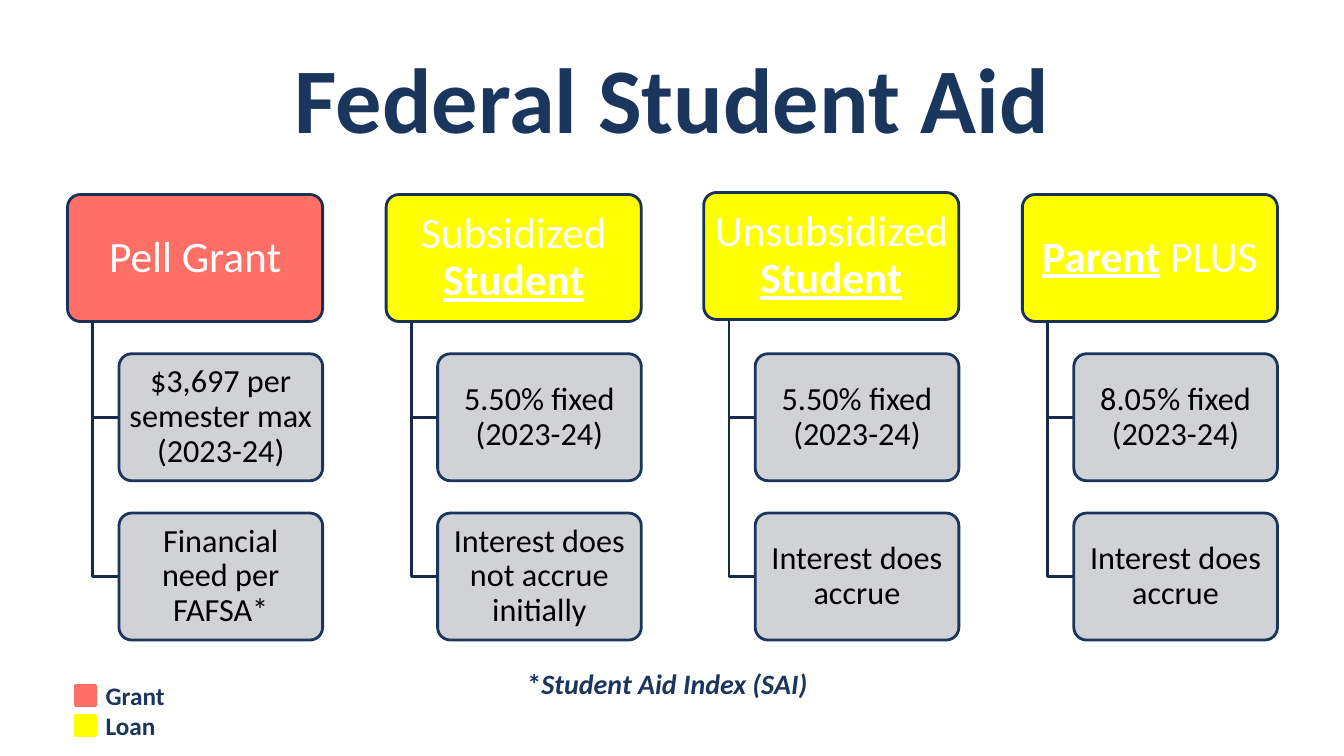
from dataclasses import dataclass

from lxml.etree import SubElement
from pptx import Presentation
from pptx.dml.color import RGBColor
from pptx.enum.shapes import MSO_SHAPE
from pptx.enum.text import MSO_ANCHOR, MSO_AUTO_SIZE, PP_ALIGN
from pptx.oxml.ns import qn
from pptx.util import Pt

PX = 9144  # EMU; 100 px to the inch


@dataclass(frozen=True)
class Theme:
    font: str = "Calibri"
    navy: str = "1B365D"
    head_line: str = "193154"
    branch: str = "162B4A"
    grant: str = "FF6F66"
    loan: str = "FFFF00"
    detail: str = "CDCED2"
    white: str = "FFFFFF"
    black: str = "000000"
    title_size: int = 66
    head_size: int = 31
    detail_size: int = 23
    legend_size: int = 18
    note_size: int = 20
    line: int = 2


THEME = Theme()

# Fill, rise of the head above the row, head spans, details
PROGRAMS = [
    (THEME.grant, 0, [("Pell Grant", "")],
     ["$3,697 per semester max (2023-24)", "Financial need per FAFSA*"]),
    (THEME.loan, 0, [("Subsidized ", ""), ("Student", "bu")],
     ["5.50% fixed (2023-24)", "Interest does not accrue initially"]),
    (THEME.loan, 2, [("Unsubsidized ", ""), ("Student", "bu")],
     ["5.50% fixed (2023-24)", "Interest does accrue"]),
    (THEME.loan, 0, [("Parent", "bu"), (" PLUS", "")],
     ["8.05% fixed (2023-24)", "Interest does accrue"]),
]
LEGEND = [("Grant", THEME.grant), ("Loan", THEME.loan)]


def emu(*lengths):
    return [length * PX for length in lengths]


def write(frame, spans, size, color, align=PP_ALIGN.CENTER):
    """Fill the frame's paragraph with (text, style) spans; style letters are b, i and u."""
    frame.word_wrap = True
    para = frame.paragraphs[0]
    para.alignment = align
    for text, style in spans:
        span = para.add_run()
        span.text = text
        font = span.font
        font.name, font.size = THEME.font, Pt(size)
        font.color.rgb = RGBColor.from_string(color)
        font.bold, font.italic, font.underline = (mark in style for mark in "biu")


def add_box(page, kind, box, fill, line):
    shape = page.shapes.add_shape(kind, *emu(*box))
    shape.shadow.inherit = False
    shape.fill.solid()
    shape.fill.fore_color.rgb = RGBColor.from_string(fill)
    shape.line.color.rgb = RGBColor.from_string(line)
    shape.line.width = Pt(THEME.line)
    return shape


def add_card(page, box, fill, line, spans, size, color, insets):
    card = add_box(page, MSO_SHAPE.ROUNDED_RECTANGLE, box, fill, line)
    card.adjustments[0] = 0.1
    frame = card.text_frame
    frame.margin_left = frame.margin_right = insets[0] * PX
    frame.margin_top = frame.margin_bottom = insets[1] * PX
    frame.vertical_anchor = MSO_ANCHOR.MIDDLE
    write(frame, spans, size, color)
    frame.paragraphs[0].line_spacing = 0.9
    return card


def add_branch(page, x, top, bottom, right):
    builder = page.shapes.build_freeform(x, top, scale=PX)
    builder.add_line_segments([(x, bottom), (right, bottom)], close=False)
    branch = builder.convert_to_shape()
    branch.shadow.inherit = False
    branch.fill.background()
    branch.line.color.rgb = RGBColor.from_string(THEME.branch)
    branch.line.width = Pt(THEME.line)


def add_label(page, box, spans, size, align):
    label = page.shapes.add_textbox(*emu(*box))
    write(label.text_frame, spans, size, THEME.navy, align)


def add_title(page, box, text):
    title = page.shapes.title
    title.left, title.top, title.width, title.height = emu(*box)
    frame = title.text_frame
    frame.auto_size = MSO_AUTO_SIZE.NONE
    frame.vertical_anchor = MSO_ANCHOR.MIDDLE
    write(frame, [(text, "b")], THEME.title_size, THEME.navy)


def add_program(page, box, program):
    """Place a head card with its details hanging below it."""
    left, top, width, height = box
    fill, rise, spans, details = program
    card_height, row_pitch, indent = 126, 158, 51
    add_card(page, (left, top - rise, width, card_height), fill, THEME.head_line,
             spans, THEME.head_size, THEME.white, (6, 4))
    for row, text in enumerate(details, 1):
        detail_top = top + row * row_pitch
        add_branch(page, left + 25, top - rise + card_height,
                   detail_top + card_height // 2, left + indent)
        card = add_card(page, (left + indent, detail_top, width - indent, card_height),
                        THEME.detail, THEME.navy, [(text, "")],
                        THEME.detail_size, THEME.black, (5, 3))
        color = card.fill._xPr.find(qn("a:solidFill"))[0]
        SubElement(color, qn("a:alpha"), val="90000")


def add_programs(page, box):
    left, top, width, height = box
    card_width = 253
    pitch = (width - card_width) / (len(PROGRAMS) - 1)
    for column, program in enumerate(PROGRAMS):
        add_program(page, (left + round(column * pitch), top, card_width, height), program)


def add_legend(page, box):
    left, top, width, height = box
    swatch, pitch = 20, 30
    for row, (name, fill) in enumerate(LEGEND):
        row_top = top + row * pitch
        add_box(page, MSO_SHAPE.RECTANGLE, (left, row_top + 10, swatch, swatch), fill, fill)
        add_label(page, (left + swatch, row_top, width - swatch, height - pitch),
                  [(name, "b")], THEME.legend_size, PP_ALIGN.LEFT)


def main():
    deck = Presentation()
    deck.slide_width, deck.slide_height = emu(1333, 750)
    page = deck.slides.add_slide(deck.slide_layouts[5])
    add_title(page, (67, 33, 1200, 125), "Federal Student Aid")
    add_programs(page, (67, 193, 1200, 442))
    add_legend(page, (75, 670, 112, 70))
    add_label(page, (258, 656, 808, 44), [("*", "b"), ("Student Aid Index (SAI)", "bi")],
              THEME.note_size, PP_ALIGN.CENTER)
    deck.save("out.pptx")


if __name__ == "__main__":
    main()
